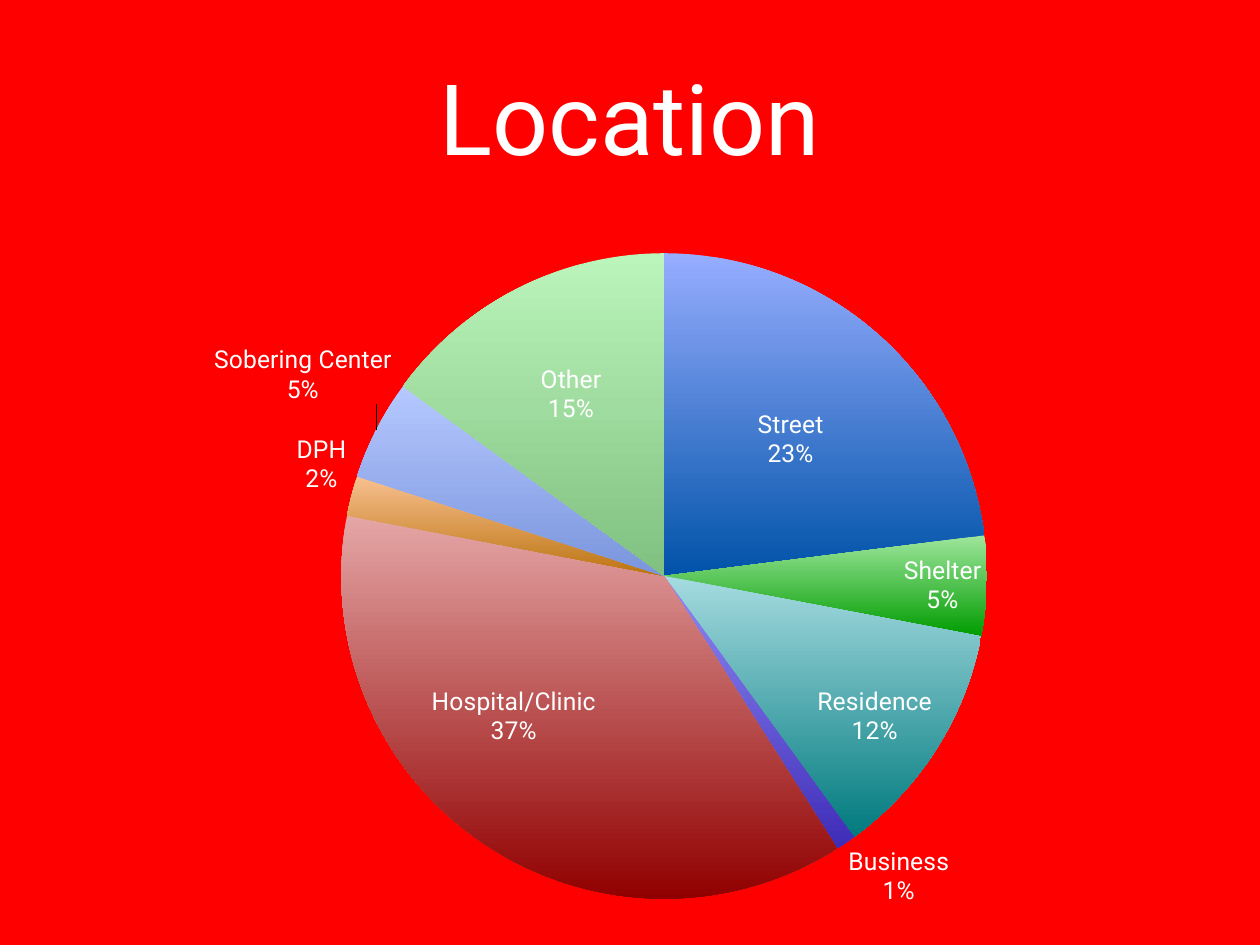
from lxml import etree
from pptx import Presentation
from pptx.chart.data import CategoryChartData
from pptx.dml.color import RGBColor
from pptx.enum.chart import XL_CHART_TYPE as ChartType, XL_LABEL_POSITION as Position
from pptx.enum.text import MSO_ANCHOR as Anchor, PP_ALIGN as Align
from pptx.oxml import parse_xml
from pptx.oxml.ns import nsdecls, qn
from pptx.util import Pt

FONT = "Roboto"
COLORS = {
    "background": "FF0000",
    "text": "FFFFFF",
    "Street": ("97ADFF", "0053A9"),
    "Shelter": ("9EE69C", "009C00"),
    "Residence": ("A5DBE0", "007A7E"),
    "Business": ("8F8BF5", "3F2CB8"),
    "Hospital/Clinic": ("E5A6A6", "910000"),
    "DPH": ("F8C090", "BC7410"),
    "Sobering Center": ("B5C8FF", "7A95DC"),
    "Other": ("BBF5BB", "80C080"),
}
LOCATIONS = [
    ("Street", 23, Position.CENTER, (0.02, -0.02)),
    ("Shelter", 5, Position.INSIDE_END, None),
    ("Residence", 12, Position.INSIDE_END, None),
    ("Business", 1, Position.OUTSIDE_END, None),
    ("Hospital/Clinic", 37, Position.CENTER, (-0.06, 0.01)),
    ("DPH", 2, Position.OUTSIDE_END, None),
    ("Sobering Center", 5, Position.OUTSIDE_END, (0.02, -0.03)),
    ("Other", 15, Position.CENTER, (-0.02, -0.05)),
]


def write_text(frame, text, size, color, align):
    paragraph = frame.paragraphs[0]
    paragraph.alignment = align
    run = paragraph.add_run()
    run.text = text
    run.font.name = FONT
    run.font.size = Pt(size)
    run.font.color.rgb = RGBColor.from_string(color)


def make_layout(**values):
    parts = "".join(f'<c:{name} val="{value}"/>' for name, value in values.items())
    return parse_xml(
        f'<c:layout {nsdecls("c")}><c:manualLayout>{parts}</c:manualLayout></c:layout>'
    )


presentation = Presentation()
presentation.slide_width = Pt(1024)
presentation.slide_height = Pt(768)
slide = presentation.slides.add_slide(presentation.slide_layouts[5])
slide.background.fill.solid()
slide.background.fill.fore_color.rgb = RGBColor.from_string(COLORS["background"])

title = slide.shapes.title
title.left, title.top, title.width, title.height = Pt(75), Pt(32), Pt(874), Pt(124.5)
title_frame = title.text_frame
title_frame.vertical_anchor = Anchor.MIDDLE
title_frame.margin_left = title_frame.margin_right = Pt(4)
title_frame.margin_top = title_frame.margin_bottom = Pt(4)
write_text(title_frame, "Location", size=80, color=COLORS["text"], align=Align.CENTER)

chart_data = CategoryChartData()
chart_data.categories = [location[0] for location in LOCATIONS]
chart_data.add_series("Series 1", [location[1] for location in LOCATIONS])
chart = slide.shapes.add_chart(
    ChartType.PIE, Pt(108), Pt(156), Pt(807), Pt(612), chart_data
).chart
chart.has_title = False
chart.has_legend = False
chart.font.name = FONT
chart.font.size = Pt(20)
chart.font.color.rgb = RGBColor.from_string(COLORS["text"])

plot = chart.plots[0]
plot.vary_by_categories = True
series = plot.series[0]
for index, (name, share, position, offset) in enumerate(LOCATIONS):
    point = series.points[index]
    point.format.line.fill.background()
    fill = point.format.fill
    fill.gradient()
    fill.gradient_angle = 270
    for stop, color in zip(fill.gradient_stops, COLORS[name]):
        stop.color.rgb = RGBColor.from_string(color)
    label = point.data_label
    label.position = position
    label.font.name = FONT
    label.font.size = Pt(20)
    label.font.color.rgb = RGBColor.from_string(COLORS["text"])

for label, location in zip(series._element.iter(qn("c:dLbl")), LOCATIONS):
    for flag, shown in (("c:showVal", "0"), ("c:showCatName", "1"), ("c:showPercent", "1")):
        label.find(qn(flag)).set("val", shown)
    etree.SubElement(label, qn("c:separator")).text = "\n"
    if location[3]:
        label.insert(1, make_layout(x=location[3][0], y=location[3][1]))

plot_area = plot._element.getparent()
for layout in plot_area.findall(qn("c:layout")):
    plot_area.remove(layout)
plot_area.insert(
    0,
    make_layout(
        layoutTarget="inner", xMode="edge", yMode="edge", x=0.21, y=0.08, w=0.65, h=0.86
    ),
)

presentation.save("out.pptx")
